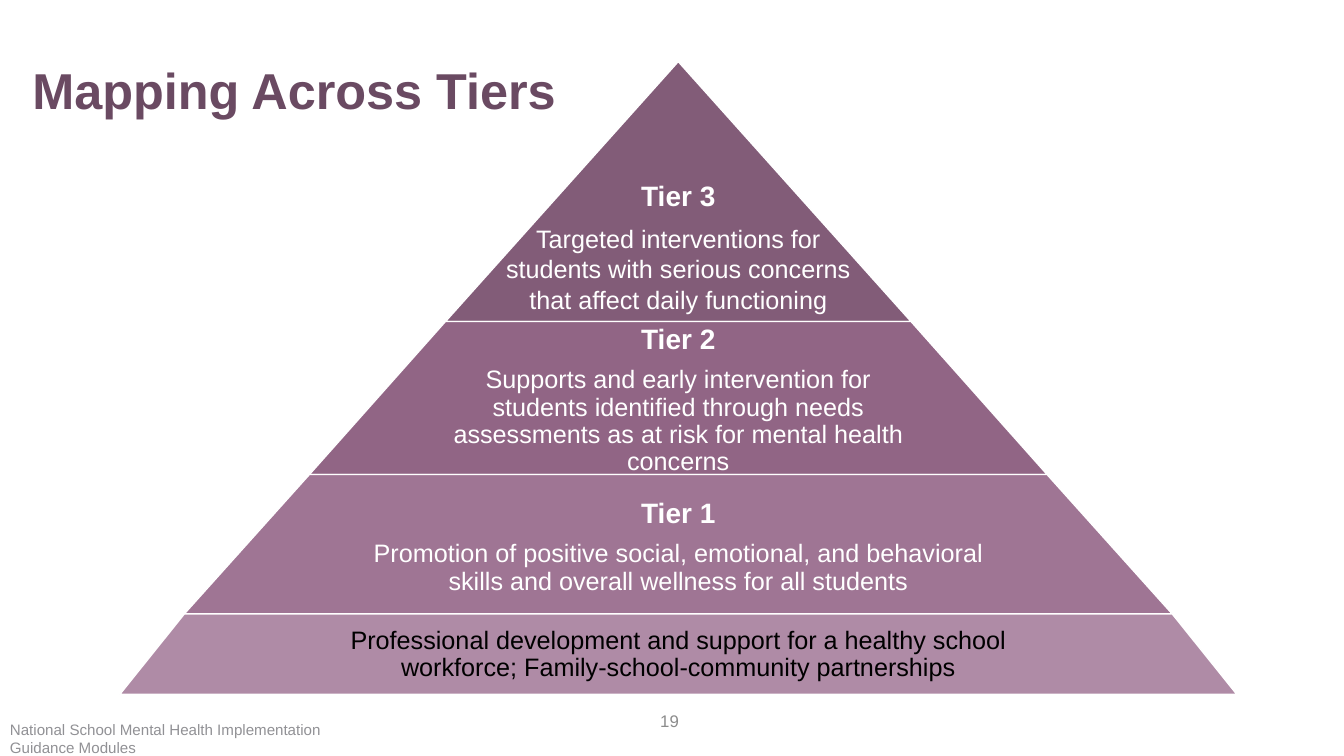
from pptx import Presentation
from pptx import util as u
from pptx.dml.color import RGBColor
from pptx.enum import text

WHITE = RGBColor(0xFF, 0xFF, 0xFF)
BLACK = RGBColor(0, 0, 0)
PLUM = RGBColor(0x6A, 0x4A, 0x62)
NUMBER_GRAY = RGBColor(0x8C, 0x8C, 0x8C)
FOOTER_GRAY = RGBColor(0x91, 0x91, 0x95)
TIER_3_FILL = RGBColor(0x82, 0x5C, 0x78)
TIER_2_FILL = RGBColor(0x91, 0x65, 0x85)
TIER_1_FILL = RGBColor(0x9F, 0x75, 0x94)
BASE_FILL = RGBColor(0xAF, 0x8B, 0xA6)

CENTER = 484.5
LEVELS = [(44, 0), (229.7, 166.3), (339, 263.5), (438.5, 352.8), (496, 398.9)]
BANDS = [
    (TIER_3_FILL, WHITE, "Tier 3",
     "Targeted interventions for students with serious concerns that affect daily functioning",
     38, 86, 1.0),
    (TIER_2_FILL, WHITE, "Tier 2",
     "Supports and early intervention for students identified through needs "
     "assessments as at risk for mental health concerns",
     94, 3, 0.9),
    (TIER_1_FILL, WHITE, "Tier 1",
     "Promotion of positive social, emotional, and behavioral skills and overall "
     "wellness for all students",
     125, 18, 0.9),
    (BASE_FILL, BLACK, None,
     "Professional development and support for a healthy school workforce; "
     "Family-school-community partnerships",
     141, 10, 0.9),
]


class TierSlide:
    font_name = "Arial"

    def __init__(self, presentation):
        self.slide = presentation.slides.add_slide(presentation.slide_layouts[5])

    def add_words(self, paragraph, words, size, color, bold=False,
                  align=text.PP_ALIGN.LEFT, spacing=1.0, after=0):
        paragraph.alignment = align
        paragraph.line_spacing = spacing
        paragraph.space_before = u.Pt(0)
        paragraph.space_after = u.Pt(after)
        run = paragraph.add_run()
        run.text = words
        run.font.name = self.font_name
        run.font.size = u.Pt(size)
        run.font.bold = bold
        run.font.color.rgb = color

    def title(self, words, left, top, width, height):
        shape = self.slide.shapes.title
        shape.left, shape.top = u.Pt(left), u.Pt(top)
        shape.width, shape.height = u.Pt(width), u.Pt(height)
        frame = shape.text_frame
        frame.vertical_anchor = text.MSO_ANCHOR.MIDDLE
        self.add_words(frame.paragraphs[0], words, 36, PLUM, bold=True, spacing=0.9)

    def label(self, words, left, top, width, height, size, color,
              align=text.PP_ALIGN.LEFT, anchor=text.MSO_ANCHOR.TOP):
        shape = self.slide.shapes.add_textbox(
            u.Pt(left), u.Pt(top), u.Pt(width), u.Pt(height))
        frame = shape.text_frame
        frame.word_wrap = True
        frame.vertical_anchor = anchor
        self.add_words(frame.paragraphs[0], words, size, color, align=align)

    def band(self, upper, lower, fill, color, heading, words, side, top_inset, spacing):
        (top, half_top), (bottom, half_bottom) = upper, lower
        corners = [(CENTER - half_bottom, bottom), (CENTER - half_top, top),
                   (CENTER + half_top, top), (CENTER + half_bottom, bottom)]
        points = [(u.Pt(x), u.Pt(y)) for x, y in corners]
        builder = self.slide.shapes.build_freeform(*points[0])
        builder.add_line_segments(points[1:], close=True)
        shape = builder.convert_to_shape()
        shape.shadow.inherit = False
        shape.fill.solid()
        shape.fill.fore_color.rgb = fill
        shape.line.color.rgb = WHITE
        shape.line.width = u.Pt(1)
        frame = shape.text_frame
        frame.word_wrap = True
        frame.vertical_anchor = text.MSO_ANCHOR.TOP
        frame.margin_left = frame.margin_right = u.Pt(side)
        frame.margin_top, frame.margin_bottom = u.Pt(top_inset), u.Pt(0)
        paragraph = frame.paragraphs[0]
        if heading:
            self.add_words(paragraph, heading, 20, color, bold=True,
                           align=text.PP_ALIGN.CENTER, spacing=0.9, after=8)
            paragraph = frame.add_paragraph()
        self.add_words(paragraph, words, 18, color,
                       align=text.PP_ALIGN.CENTER, spacing=spacing)


def main():
    presentation = Presentation()
    presentation.slide_width = u.Pt(960)
    presentation.slide_height = u.Pt(540)
    tiers = TierSlide(presentation)
    tiers.label("19", 276, 500.4, 216, 28.8, 12, NUMBER_GRAY,
                text.PP_ALIGN.RIGHT, text.MSO_ANCHOR.MIDDLE)
    tiers.title("Mapping Across Tiers", 16, 14.4, 393, 104.4)
    for upper, lower, band in zip(LEVELS, LEVELS[1:], BANDS):
        tiers.band(upper, lower, *band)
    tiers.label("National School Mental Health Implementation Guidance Modules",
                0, 511.2, 274.3, 28.8, 10.8, FOOTER_GRAY)
    presentation.save("out.pptx")


if __name__ == "__main__":
    main()
